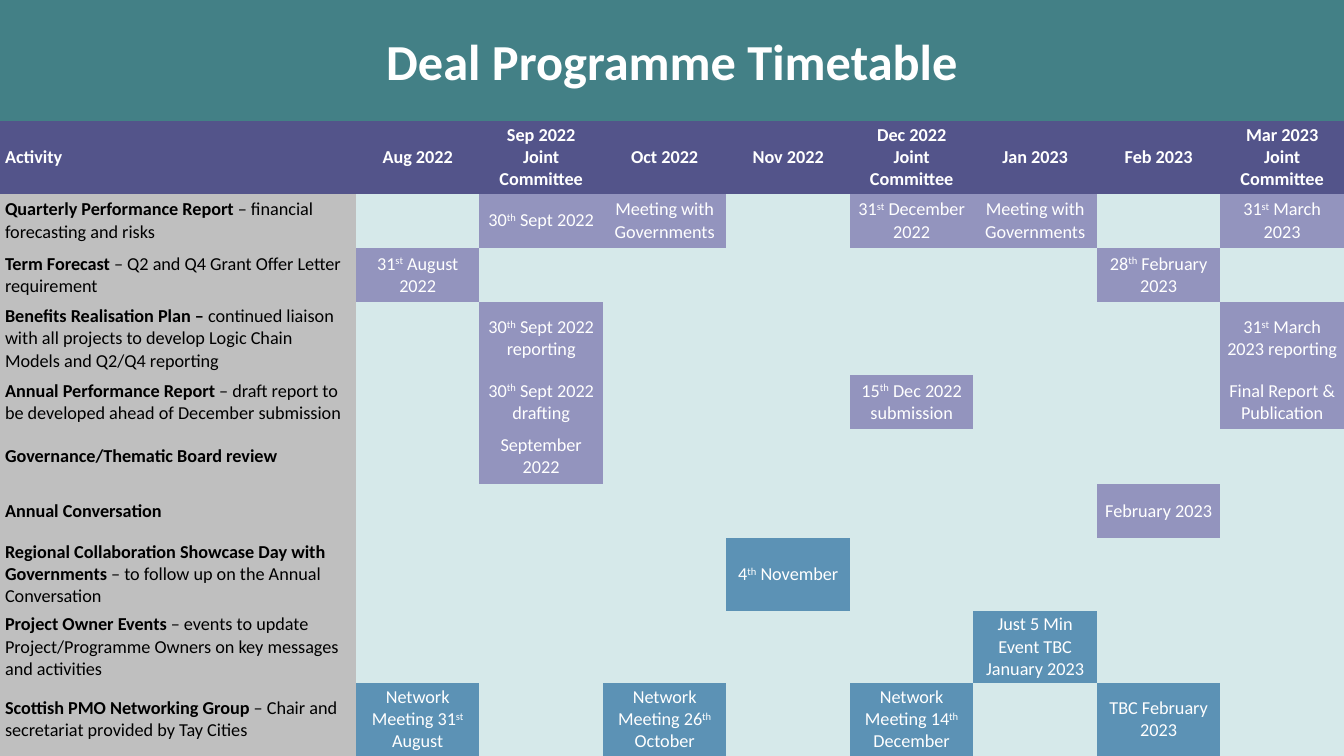
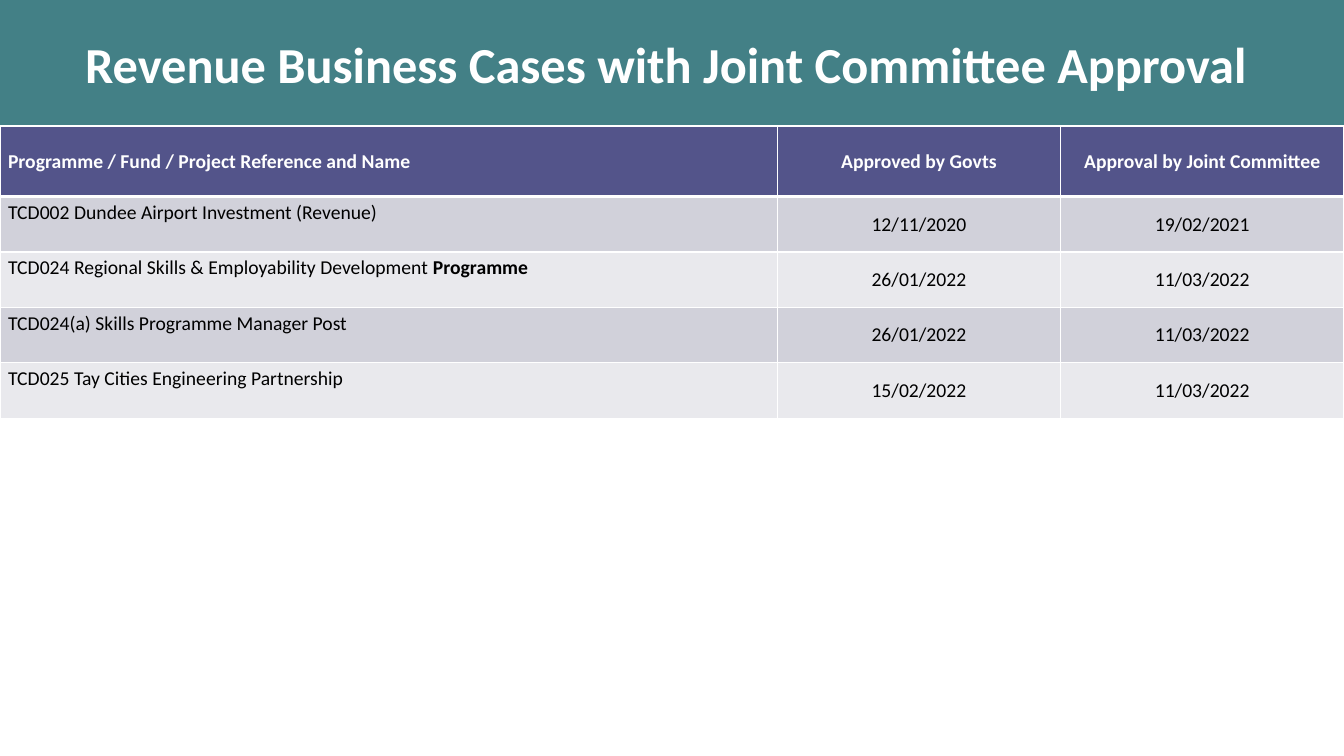
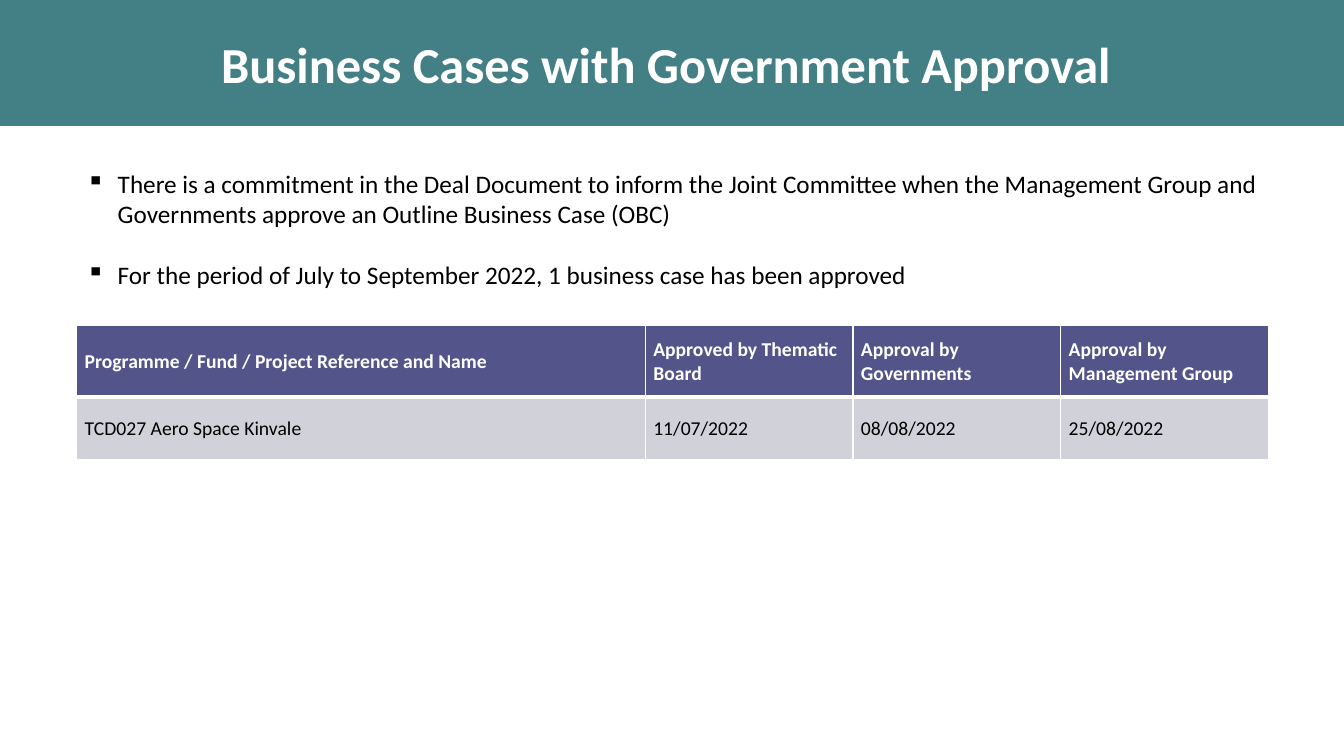
"""Build three slides on a deal programme: its timetable and its approved business cases."""
from lxml.etree import SubElement
from pptx import Presentation
from pptx.dml.color import RGBColor as Rgb
from pptx.enum.text import MSO_ANCHOR as Anchor, PP_ALIGN as Align
from pptx.oxml.ns import qn
from pptx.util import Inches, Pt

HUES = {"teal": "438086", "head": "53548A", "label": "BFBFBF", "blank": "D6E9EA",
        "report": "9394BE", "event": "5C92B5", "odd": "D1D1DA", "even": "E9E9ED",
        "white": "FFFFFF", "black": "000000"}
FONT = "Calibri"
WIDE, TALL, BAND = 13.33, 7.5, 1.25
PLAIN = "{2D5ABB26-0587-4C30-8999-92F81FD0307C}"

MONTHS = ["Aug 2022", "Sep 2022\nJoint Committee", "Oct 2022", "Nov 2022",
          "Dec 2022\nJoint Committee", "Jan 2023", "Feb 2023", "Mar 2023\nJoint Committee"]
MEET = "Meeting with Governments"
PLAN = [
    ("*Quarterly Performance Report* – financial forecasting and risks", 0.54, "report",
     {"Sep": "30^th^ Sept 2022", "Oct": MEET, "Dec": "31^st^ December 2022",
      "Jan": MEET, "Mar": "31^st^ March 2023"}),
    ("*Term Forecast* – Q2 and Q4 Grant Offer Letter requirement", 0.54, "report",
     {"Aug": "31^st^ August 2022", "Feb": "28^th^ February 2023"}),
    ("*Benefits Realisation Plan –* continued liaison with all projects to develop "
     "Logic Chain Models and Q2/Q4 reporting", 0.72, "report",
     {"Sep": "30^th^ Sept 2022 reporting", "Mar": "31^st^ March 2023 reporting"}),
    ("*Annual Performance Report* – draft report to be developed ahead of December submission",
     0.54, "report",
     {"Sep": "30^th^ Sept 2022 drafting", "Dec": "15^th^ Dec 2022 submission",
      "Mar": "Final Report & Publication"}),
    ("*Governance/Thematic Board review*", 0.54, "report", {"Sep": "September 2022"}),
    ("*Annual Conversation*", 0.54, "report", {"Feb": "February 2023"}),
    ("*Regional Collaboration Showcase Day with Governments* – to follow up on the "
     "Annual Conversation", 0.72, "event", {"Nov": "4^th^ November"}),
    ("*Project Owner Events* – events to update Project/Programme Owners on key messages "
     "and activities", 0.72, "event", {"Jan": "Just 5 Min Event TBC January 2023"}),
    ("*Scottish PMO Networking Group* – Chair and secretariat provided by Tay Cities",
     0.72, "event",
     {"Aug": "Network Meeting 31^st^ August", "Oct": "Network Meeting 26^th^ October",
      "Dec": "Network Meeting 14^th^ December", "Feb": "TBC February 2023"}),
]

NAME = "Programme / Fund / Project Reference and Name"
REVENUE = [
    (NAME, "Approved by Govts", "Approval by Joint Committee"),
    ("TCD002 Dundee Airport Investment (Revenue)", "12/11/2020", "19/02/2021"),
    ("TCD024 Regional Skills & Employability Development *Programme*",
     "26/01/2022", "11/03/2022"),
    ("TCD024(a) Skills Programme Manager Post", "26/01/2022", "11/03/2022"),
    ("TCD025 Tay Cities Engineering Partnership", "15/02/2022", "11/03/2022"),
]
CASES = [
    (NAME, "Approved by Thematic Board", "Approval by Governments",
     "Approval by Management Group"),
    ("TCD027 Aero Space Kinvale", "11/07/2022", "08/08/2022", "25/08/2022"),
]
NOTES = [
    "There is a commitment in the Deal Document to inform the Joint Committee when the "
    "Management Group and Governments approve an Outline Business Case (OBC)",
    "For the period of July to September 2022, 1 business case has been approved",
]


def style(font, size, hue, **more):
    look = {"name": FONT, "size": Pt(size), **more}
    for key, value in look.items():
        setattr(font, key, value)
    font.color.rgb = Rgb.from_string(HUES[hue])


def write(frame, text, size, hue, align=Align.LEFT, bold=False):
    """Write paragraphs split by line, with *bold* and ^raised^ parts."""
    for n, line in enumerate(text.split("\n")):
        para = frame.paragraphs[0] if n == 0 else frame.add_paragraph()
        para.alignment = align
        for i, part in enumerate(line.split("*")):
            for j, bit in enumerate(part.split("^")):
                if bit:
                    run = para.add_run()
                    run.text = bit
                    style(run.font, size, hue, bold=bold or i % 2 == 1)
                    if j % 2:
                        run.font._element.set("baseline", "30000")


def paint(shape, hue):
    shape.fill.solid()
    shape.fill.fore_color.rgb = Rgb.from_string(HUES[hue])


def start(deck, text, top=0):
    slide = deck.slides.add_slide(deck.slide_layouts[5])
    title = slide.shapes.title
    place = {"left": 0, "top": top, "width": WIDE, "height": BAND}
    for key, value in place.items():
        setattr(title, key, Inches(value))
    paint(title, "teal")
    title.text_frame.vertical_anchor = Anchor.MIDDLE
    write(title.text_frame, text, 36, "white", Align.CENTER, True)
    return slide


def grid(slide, left, top, cols, rows):
    frame = slide.shapes.add_table(len(rows), len(cols), Inches(left), Inches(top),
                                   Inches(sum(cols)), Inches(sum(rows)))
    table = frame.table
    table._tbl.tblPr.find(qn("a:tableStyleId")).text = PLAIN
    for col, width in zip(table.columns, cols):
        col.width = Inches(width)
    for row, height in zip(table.rows, rows):
        row.height = Inches(height)
    return table


def fill(cell, text, back, size, hue, pad, align=Align.LEFT, bold=False):
    paint(cell, back)
    cell.vertical_anchor = Anchor.MIDDLE
    for side, gap in zip(("left", "right", "top", "bottom"), (pad, pad, pad / 2, pad / 2)):
        setattr(cell, "margin_" + side, Inches(gap))
    write(cell.text_frame, text, size, hue, align, bold)


def edge(cell, **sides):
    props = cell._tc.get_or_add_tcPr()
    for side in "LRTB":
        line = SubElement(props, qn("a:ln" + side), w=str(Pt(sides.get(side, 1))))
        SubElement(SubElement(line, qn("a:solidFill")), qn("a:srgbClr"), val=HUES["white"])


def listing(slide, left, top, cols, rows, data, align):
    """Add a table of cases with a dark head, banded rows and white rules."""
    table = grid(slide, left, top, cols, rows)
    for r, line in enumerate(data):
        back = "head" if r == 0 else ("even", "odd")[r % 2]
        for c, text in enumerate(line):
            cell = table.cell(r, c)
            edge(cell, **({"B": 3} if r == 0 else {"T": 3} if r == 1 else {}))
            fill(cell, text, back, 14, "black" if r else "white", 0.08,
                 align if c else Align.LEFT, r == 0)
    return table


def timetable(deck):
    slide = start(deck, "Deal Programme Timetable", -0.03)
    step = 1.225
    cols = [WIDE - step * len(MONTHS)] + [step] * len(MONTHS)
    table = grid(slide, 0, 1.2, cols, [0.72] + [tall for _, tall, _, _ in PLAN])
    for c, text in enumerate(["Activity"] + MONTHS):
        fill(table.cell(0, c), text, "head", 13, "white", 0.05,
             Align.CENTER if c else Align.LEFT, True)
    for r, (label, _, kind, dates) in enumerate(PLAN, 1):
        fill(table.cell(r, 0), label, "label", 13, "black", 0.05)
        for c, month in enumerate(MONTHS, 1):
            text = dates.get(month[:3], "")
            fill(table.cell(r, c), text, kind if text else "blank", 13, "white", 0.05,
                 Align.CENTER)


def revenue(deck):
    slide = start(deck, "Revenue Business Cases with Joint Committee Approval ")
    table = listing(slide, 0, BAND, [7.71, 2.81, 2.81], [0.7] + [0.55] * 4, REVENUE,
                    Align.CENTER)
    for r in range(1, len(REVENUE)):
        table.cell(r, 0).vertical_anchor = Anchor.TOP


def cases(deck):
    slide = start(deck, "Business Cases with Government Approval ")
    listing(slide, 0.76, 3.23, [5.64] + [2.06] * 3, [0.71, 0.62], CASES, Align.LEFT)
    box = slide.shapes.add_textbox(Inches(0.76), Inches(1.62), Inches(12.03), Inches(1.31))
    frame = box.text_frame
    frame.word_wrap = True
    write(frame, "\n".join(NOTES), 18, "black")
    for n, para in enumerate(frame.paragraphs):
        if n:
            para.space_before = Pt(22)
        props = para._p.get_or_add_pPr()
        props.set("marL", str(Inches(0.31)))
        props.set("indent", str(-Inches(0.31)))
        SubElement(props, qn("a:buChar"), char="▪")


def main():
    deck = Presentation()
    deck.slide_width, deck.slide_height = Inches(WIDE), Inches(TALL)
    for build in (timetable, revenue, cases):
        build(deck)
    deck.save("out.pptx")


if __name__ == "__main__":
    main()
